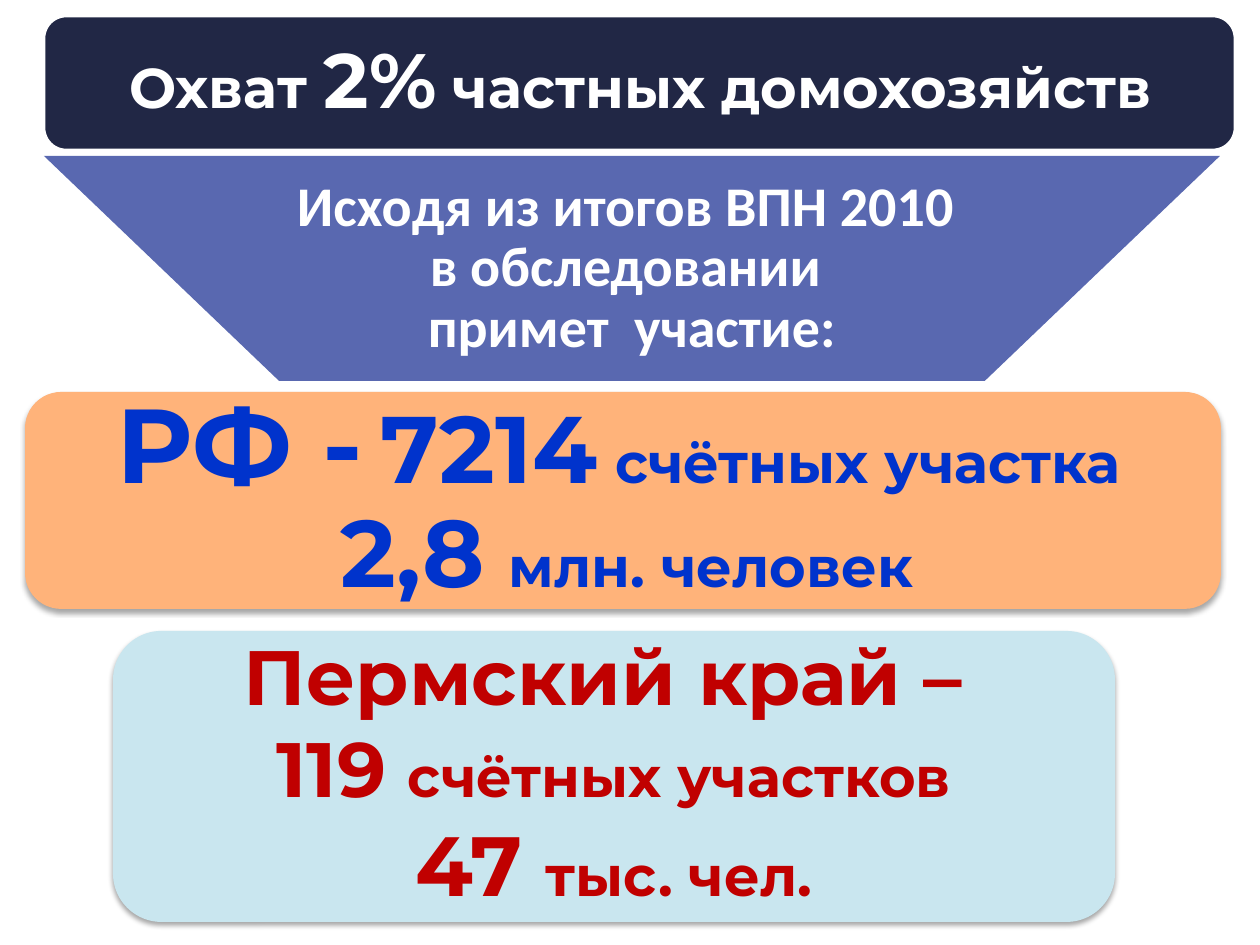
from lxml import etree
from pptx import Presentation
from pptx.dml.color import RGBColor
from pptx.enum.shapes import MSO_SHAPE
from pptx.enum.text import MSO_ANCHOR, MSO_AUTO_SIZE, PP_ALIGN
from pptx.oxml.ns import qn
from pptx.util import Pt

PX = 914400 // 126
ROUND = MSO_SHAPE.ROUNDED_RECTANGLE
FUNNEL = MSO_SHAPE.FLOWCHART_MANUAL_OPERATION
MIDDLE = MSO_ANCHOR.MIDDLE
FIXED = MSO_AUTO_SIZE.NONE
CENTER = PP_ALIGN.CENTER

HEX = {
    "navy": "212745", "violet": "5968B0", "orange": "FFB37A", "sky": "C9E6EF",
    "white": "FFFFFF", "blue": "0033CC", "red": "C00000", "black": "000000",
}

# Each paragraph is a list of (text, size) runs.
HEAD = [[("Охват ", 32), ("2%", 44), (" частных домохозяйств", 32)]]
BASIS = [[("Исходя из итогов ВПН 2010 \nв обследовании \nпримет  участие:", 32)]]
NATION = [
    [("РФ -", 60), (" ", 36), ("7214", 54), (" ", 36), ("счётных участка ", 32)],
    [("2,8", 54), (" ", 48), ("млн. человек", 32)],
]
REGION = [
    [("Пермский край – \n119 ", 44), ("счётных участков", 32)],
    [("47 ", 48), ("тыс. чел.", 32)],
]


def color(name):
    return RGBColor.from_string(HEX[name])


def scale(*sizes):
    return [size * PX for size in sizes]


def add_panel(slide, kind, area, fill, edge=None):
    panel = slide.shapes.add_shape(kind, *scale(*area))
    panel.shadow.inherit = False
    panel.fill.solid()
    panel.fill.fore_color.rgb = color(fill)
    if edge:
        panel.line.color.rgb = color(edge)
        panel.line.width = Pt(1.5)
    else:
        panel.line.fill.background()
    return panel


def add_shadow(panel):
    """Cast a soft shadow straight down."""
    effects = panel.element.spPr.find(qn("a:effectLst"))
    outer = etree.SubElement(
        effects, qn("a:outerShdw"), blurRad=str(Pt(3)), dist=str(Pt(2)),
        dir="5400000", rotWithShape="0")
    tint = etree.SubElement(outer, qn("a:srgbClr"), val=HEX["black"])
    etree.SubElement(tint, qn("a:alpha"), val="35000")


def add_run(para, text, size):
    """Add text in one size, with a line break at each newline."""
    for i, part in enumerate(text.split("\n")):
        if i:
            para.add_line_break()
        run = para.add_run()
        run.text = part
        run.font.size = Pt(size)


def write(shape, paras, ink, inset, face="Montserrat", space=0.9):
    frame = shape.text_frame
    frame.word_wrap = True
    frame.auto_size = FIXED
    frame.vertical_anchor = MIDDLE
    side, top = scale(*inset)
    frame.margin_left = frame.margin_right = side
    frame.margin_top = frame.margin_bottom = top
    for i, runs in enumerate(paras):
        para = frame.add_paragraph() if i else frame.paragraphs[0]
        para.alignment = CENTER
        para.line_spacing = space
        para.space_before = Pt(0)
        para.font.name = face
        para.font.bold = True
        para.font.color.rgb = color(ink)
        for text, size in runs:
            add_run(para, text, size)


def add_title(slide, panel, area, paras):
    """Place the title placeholder just in front of its panel."""
    title = slide.shapes.title
    title.left, title.top, title.width, title.height = scale(*area)
    panel.element.addnext(title.element)
    write(title, paras, "white", (16, 9))


def add_card(slide, area, inner, fill, paras, ink, space):
    add_shadow(add_panel(slide, ROUND, area, fill))
    box = slide.shapes.add_textbox(*scale(*inner))
    write(box, paras, ink, (25, 13), space=space)


def main():
    deck = Presentation()
    deck.slide_width, deck.slide_height = scale(1260, 945)
    slide = deck.slides.add_slide(deck.slide_layouts[5])

    head = add_panel(slide, ROUND, (44, 16, 1191, 134), "navy", "white")
    add_title(slide, head, (47, 23, 1187, 121), HEAD)

    funnel = add_panel(slide, FUNNEL, (44, 156, 1176, 225), "violet")
    write(funnel, BASIS, "white", (15, 8), face="Calibri")

    add_card(slide, (25, 392, 1196, 217), (33, 396, 1188, 208),
             "orange", NATION, "blue", 0.9)
    add_card(slide, (113, 631, 1002, 291), (113, 641, 1002, 260),
             "sky", REGION, "red", 1.0)
    deck.save("out.pptx")


if __name__ == "__main__":
    main()
